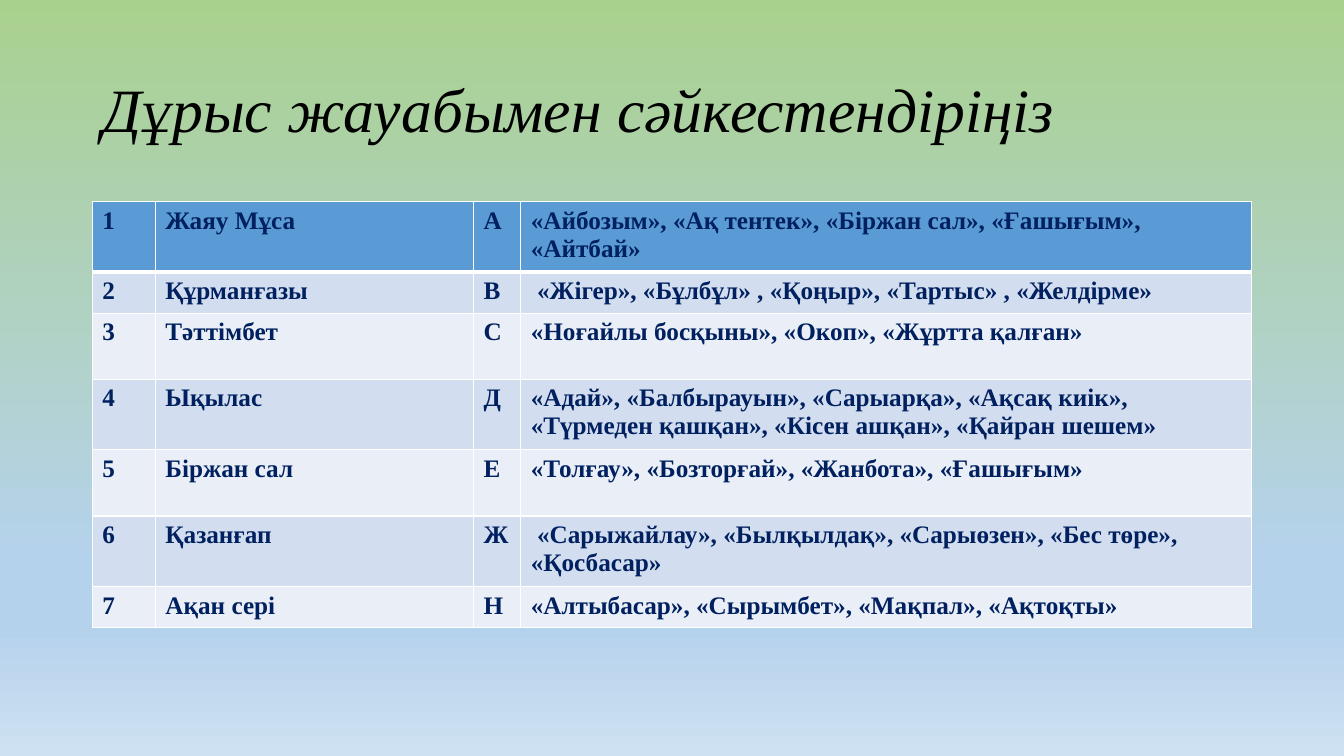
from copy import deepcopy
from dataclasses import dataclass

from lxml.etree import SubElement
from pptx import Presentation
from pptx.dml.color import RGBColor
from pptx.enum.text import MSO_ANCHOR
from pptx.oxml.ns import qn
from pptx.slide import Slide
from pptx.table import _Cell
from pptx.text.text import _Paragraph
from pptx.util import Emu, Pt

BLACK = RGBColor(0x00, 0x00, 0x00)
WHITE = RGBColor(0xFF, 0xFF, 0xFF)
NAVY = RGBColor(0x00, 0x20, 0x60)
HEADER = RGBColor(0x5B, 0x9B, 0xD5)
BAND_DARK = RGBColor(0xD2, 0xDE, 0xEF)
BAND_LIGHT = RGBColor(0xEA, 0xEF, 0xF7)
GREEN = RGBColor(0xA9, 0xD1, 0x8E)
SKY = RGBColor(0xB5, 0xD2, 0xEC)
PALE = RGBColor(0xCE, 0xE1, 0xF2)

FONT = "Times New Roman"
BACKGROUND = [(0, GREEN), (0.74, SKY), (0.83, SKY), (1, PALE)]
COLUMNS = [60, 303, 45, 696]
TALL, SHORT = 63, 39


@dataclass(frozen=True)
class Match:
    musician: str
    letter: str
    works: str
    height: int = TALL


MATCHES = [
    Match("Жаяу Мұса", "А", "«Айбозым», «Ақ тентек», «Біржан сал», «Ғашығым», «Айтбай»"),
    Match("Құрманғазы", "В", " «Жігер», «Бұлбұл» , «Қоңыр», «Тартыс» , «Желдірме»", SHORT),
    Match("Тәттімбет", "С", "«Ноғайлы босқыны», «Окоп», «Жұртта қалған»"),
    Match("Ықылас", "Д", "«Адай», «Балбырауын», «Сарыарқа», «Ақсақ киік», "
          "«Түрмеден қашқан», «Кісен ашқан», «Қайран шешем»"),
    Match("Біржан сал", "Е", "«Толғау», «Бозторғай», «Жанбота», «Ғашығым»"),
    Match("Қазанғап", "Ж", " «Сарыжайлау», «Былқылдақ», «Сарыөзен», «Бес төре», «Қосбасар»"),
    Match("Ақан сері", "Н", "«Алтыбасар», «Сырымбет», «Мақпал», «Ақтоқты»", SHORT),
]


def px(n: int) -> Emu:
    return Emu(n * 9525)


def set_text(p: _Paragraph, text: str, size: int, color: RGBColor,
             bold: bool = False, italic: bool = False) -> None:
    p.text = text
    p.font.name = FONT
    p.font.size = Pt(size)
    p.font.bold = bold
    p.font.italic = italic
    p.font.color.rgb = color


def set_borders(cell: _Cell, top: int, bottom: int) -> None:
    tcPr = cell._tc.get_or_add_tcPr()
    sides = {"a:lnL": 1, "a:lnR": 1, "a:lnT": top, "a:lnB": bottom}
    for tag, width in sides.items():
        ln = SubElement(tcPr, qn(tag), w=str(Pt(width)))
        fill = SubElement(ln, qn("a:solidFill"))
        SubElement(fill, qn("a:srgbClr"), val=str(WHITE))


def draw_background(s: Slide) -> None:
    fill = s.background.fill
    fill.gradient()
    fill.gradient_angle = 270
    stops = s.element.find(".//" + qn("a:gsLst"))
    while len(stops) < len(BACKGROUND):
        stops.append(deepcopy(stops[0]))
    for stop, (position, color) in zip(fill.gradient_stops, BACKGROUND):
        stop.position = position
        stop.color.rgb = color


def draw_title(s: Slide) -> None:
    tf = s.shapes.add_textbox(px(88), px(38), px(1104), px(139)).text_frame
    tf.word_wrap = True
    tf.vertical_anchor = MSO_ANCHOR.MIDDLE
    p = tf.paragraphs[0]
    p.line_spacing = 0.9
    set_text(p, "Дұрыс жауабымен сәйкестендіріңіз", 44, BLACK, italic=True)


def draw_table(s: Slide) -> None:
    height = sum(m.height for m in MATCHES)
    table = s.shapes.add_table(len(MATCHES), len(COLUMNS), px(88), px(192),
                               px(sum(COLUMNS)), px(height)).table
    table.first_row = False
    table.horz_banding = False
    for column, width in zip(table.columns, COLUMNS):
        column.width = px(width)
    for i, (row, m) in enumerate(zip(table.rows, MATCHES)):
        row.height = px(m.height)
        color = HEADER if i == 0 else BAND_DARK if i % 2 else BAND_LIGHT
        for cell, text in zip(row.cells, (str(i + 1), m.musician, m.letter, m.works)):
            set_borders(cell, top=3 if i == 1 else 1, bottom=3 if i == 0 else 1)
            cell.fill.solid()
            cell.fill.fore_color.rgb = color
            set_text(cell.text_frame.paragraphs[0], text, 18, NAVY, bold=True)


def main() -> None:
    prs = Presentation()
    prs.slide_width, prs.slide_height = px(1280), px(720)
    s = prs.slides.add_slide(prs.slide_layouts[6])
    draw_background(s)
    draw_title(s)
    draw_table(s)
    prs.save("out.pptx")


if __name__ == "__main__":
    main()
